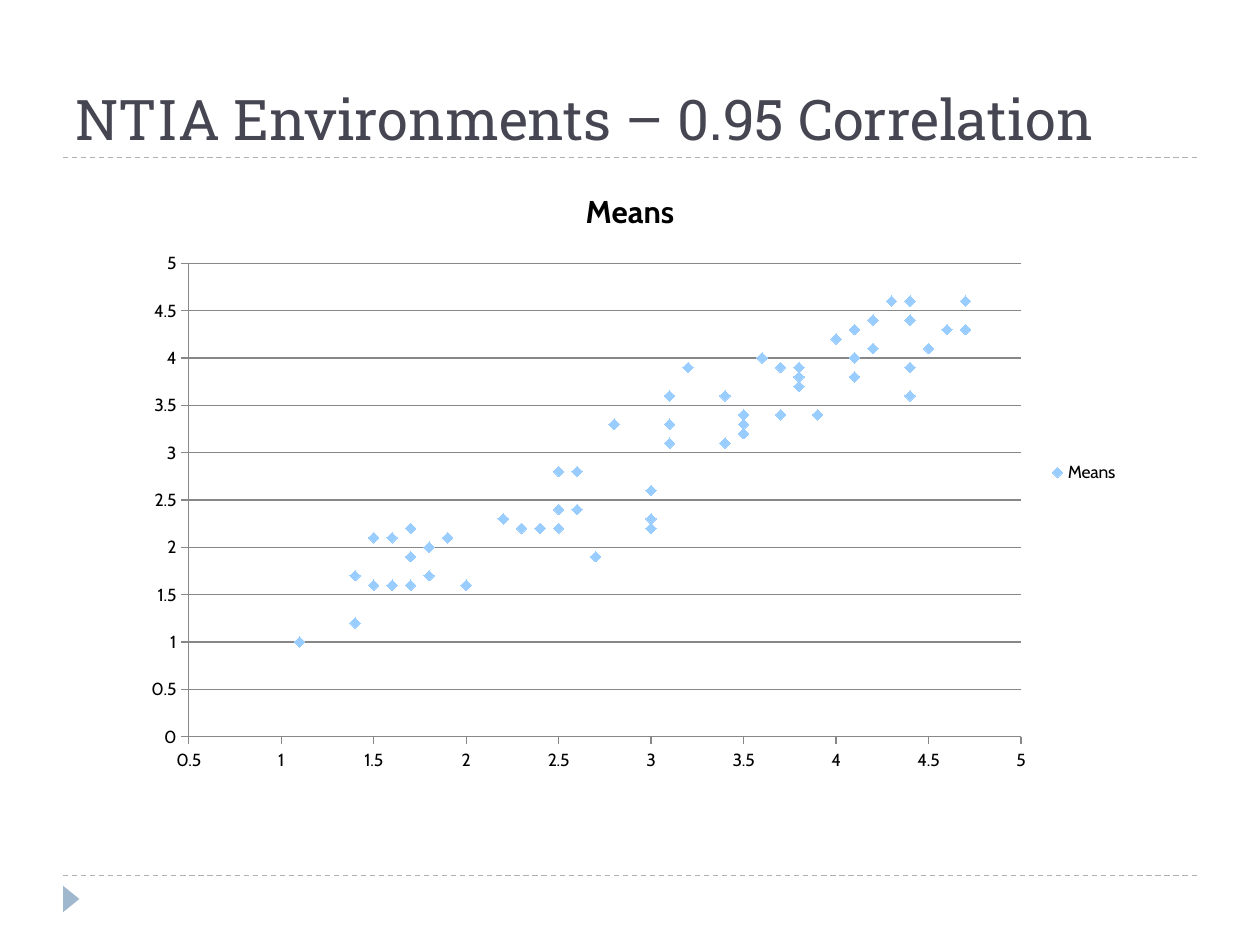
from dataclasses import dataclass

from lxml import etree
from pptx import Presentation
from pptx.chart.data import XyChartData
from pptx.dml.color import RGBColor as Rgb
from pptx.enum.chart import XL_CHART_TYPE as Kind, XL_LEGEND_POSITION as Side
from pptx.enum.chart import XL_MARKER_STYLE as Mark, XL_TICK_MARK as Tick
from pptx.enum.dml import MSO_LINE as Dash
from pptx.enum.shapes import MSO_CONNECTOR as Link, MSO_SHAPE as Shape
from pptx.enum.text import MSO_ANCHOR as Anchor
from pptx.oxml.ns import qn
from pptx.util import Inches, Pt


@dataclass(frozen=True)
class Theme:
    head: str = "Roboto Slab"
    body: str = "Cabin"
    ink: str = "464653"
    black: str = "000000"
    rule: str = "B0B0B0"
    accent: str = "9FB8CD"
    grid: str = "878787"
    dot: str = "99CCFF"
    big: int = 32
    mid: int = 18
    small: int = 10


def style(font, face, size, color, bold=False):
    font.name, font.size, font.bold = face, Pt(size), bold
    font.color.rgb = Rgb.from_string(color)


def write(frame, text, **form):
    frame.text = text
    style(frame.paragraphs[0].runs[0].font, **form)


class Deck:
    def __init__(self, theme):
        self.theme = theme
        self.prs = Presentation()
        self.prs.slide_width, self.prs.slide_height = Inches(10), Inches(7.5)
        self.slide = self.prs.slides.add_slide(self.prs.slide_layouts[6])
        self.shapes = self.slide.shapes

    def rule(self, y):
        line = self.shapes.add_connector(
            Link.STRAIGHT, Inches(0.5), Inches(y), Inches(9.5), Inches(y))
        line.line.color.rgb = Rgb.from_string(self.theme.rule)
        line.line.width = Pt(0.75)
        line.line.dash_style = Dash.DASH
        etree.SubElement(line.element.spPr, qn("a:effectLst"))

    def arrow(self, *box):
        shape = self.shapes.add_shape(
            Shape.ISOSCELES_TRIANGLE, *map(Inches, box))
        shape.rotation = 90
        shape.shadow.inherit = False
        shape.fill.solid()
        shape.fill.fore_color.rgb = Rgb.from_string(self.theme.accent)
        shape.line.fill.background()

    def title(self, text, *box):
        frame = self.shapes.add_textbox(*map(Inches, box)).text_frame
        frame.word_wrap = True
        frame.vertical_anchor = Anchor.BOTTOM
        write(frame, text, face=self.theme.head, size=self.theme.big,
              color=self.theme.ink)

    def axis(self, axis, low, grid):
        axis.minimum_scale, axis.maximum_scale = low, 5
        axis.major_unit = 0.5
        axis.major_tick_mark, axis.minor_tick_mark = Tick.OUTSIDE, Tick.NONE
        axis.has_major_gridlines = grid
        axis.tick_labels.number_format = "General"
        axis.tick_labels.number_format_is_linked = False
        lines = [axis.format.line]
        if grid:
            lines.append(axis.major_gridlines.format.line)
        for line in lines:
            line.color.rgb = Rgb.from_string(self.theme.grid)
            line.width = Pt(0.75)

    def scatter(self, name, dots, *box):
        theme = self.theme
        data = XyChartData()
        series = data.add_series(name)
        for x, y in dots:
            series.add_data_point(x, y)
        chart = self.shapes.add_chart(
            Kind.XY_SCATTER, *map(Inches, box), data).chart
        style(chart.font, theme.body, theme.small, theme.black)
        chart.has_title = True
        write(chart.chart_title.text_frame, name, face=theme.body,
              size=theme.mid, color=theme.black, bold=True)
        chart.has_legend = True
        chart.legend.position = Side.RIGHT
        chart.legend.include_in_layout = False
        self.axis(chart.category_axis, 0.5, False)
        self.axis(chart.value_axis, 0, True)

        # Diamonds without a joining line
        plot = chart.plots[0]
        plot.vary_by_categories = False
        line = plot.series[0]
        line.smooth = False
        line.format.line.fill.background()
        line.marker.style, line.marker.size = Mark.DIAMOND, 6
        line.marker.format.fill.solid()
        line.marker.format.fill.fore_color.rgb = Rgb.from_string(theme.dot)
        line.marker.format.line.fill.background()
        self.place(chart, x=0.06, y=0.16, w=0.83, h=0.77)

    def place(self, chart, **parts):
        area = chart.element.find(".//" + qn("c:plotArea"))
        for old in area.findall(qn("c:layout")):
            area.remove(old)
        layout = etree.Element(qn("c:layout"))
        area.insert(0, layout)
        manual = etree.SubElement(layout, qn("c:manualLayout"))
        rows = {"layoutTarget": "inner", "xMode": "edge", "yMode": "edge"}
        for tag, value in (rows | parts).items():
            etree.SubElement(manual, qn("c:" + tag), val=str(value))


# Paired mean scores
XS = [1.5, 1.8, 3.1, 3, 4.1, 4.7, 2.7, 1.7, 3.8, 4, 4.1, 4.5,
      2.2, 2.8, 4.2, 3.2, 4.7, 4.6, 2, 2.3, 3.4, 3.5, 2.6, 3.9,
      1.1, 1.5, 1.4, 3.5, 3.7, 4.4, 1.6, 1.9, 3.1, 3.5, 2.5, 4.4,
      1.7, 1.6, 1.7, 3.1, 3.8, 4.1, 2.4, 2.6, 3.8, 3, 4.4, 4.3,
      1.4, 2.5, 3.4, 3, 3.6, 4.4, 2.5, 2.2, 3.7, 1.8, 4.1, 4.2]
YS = [1.6, 1.7, 3.1, 2.2, 4, 4.3, 1.9, 2.2, 3.7, 4.2, 4, 4.1,
      2.3, 3.3, 4.1, 3.9, 4.6, 4.3, 1.6, 2.2, 3.1, 3.2, 2.4, 3.4,
      1, 2.1, 1.7, 3.3, 3.9, 4.6, 1.6, 2.1, 3.3, 3.4, 2.8, 4.4,
      1.9, 2.1, 1.6, 3.6, 3.9, 4.3, 2.2, 2.8, 3.8, 2.3, 3.9, 4.6,
      1.2, 2.4, 3.6, 2.6, 4, 3.6, 2.2, 2.3, 3.4, 2, 3.8, 4.4]


def main():
    deck = Deck(Theme())
    # Frame of the page
    for y in (6.95, 1.25):
        deck.rule(y)
    deck.arrow(0.46, 7.07, 0.21, 0.13)
    # Heading and chart
    deck.title("NTIA Environments – 0.95 Correlation", 0.5, 0.17, 9, 1.08)
    deck.scatter("Means", zip(XS, YS), 1.02, 1.31, 7.96, 4.88)
    deck.prs.save("out.pptx")


if __name__ == "__main__":
    main()
